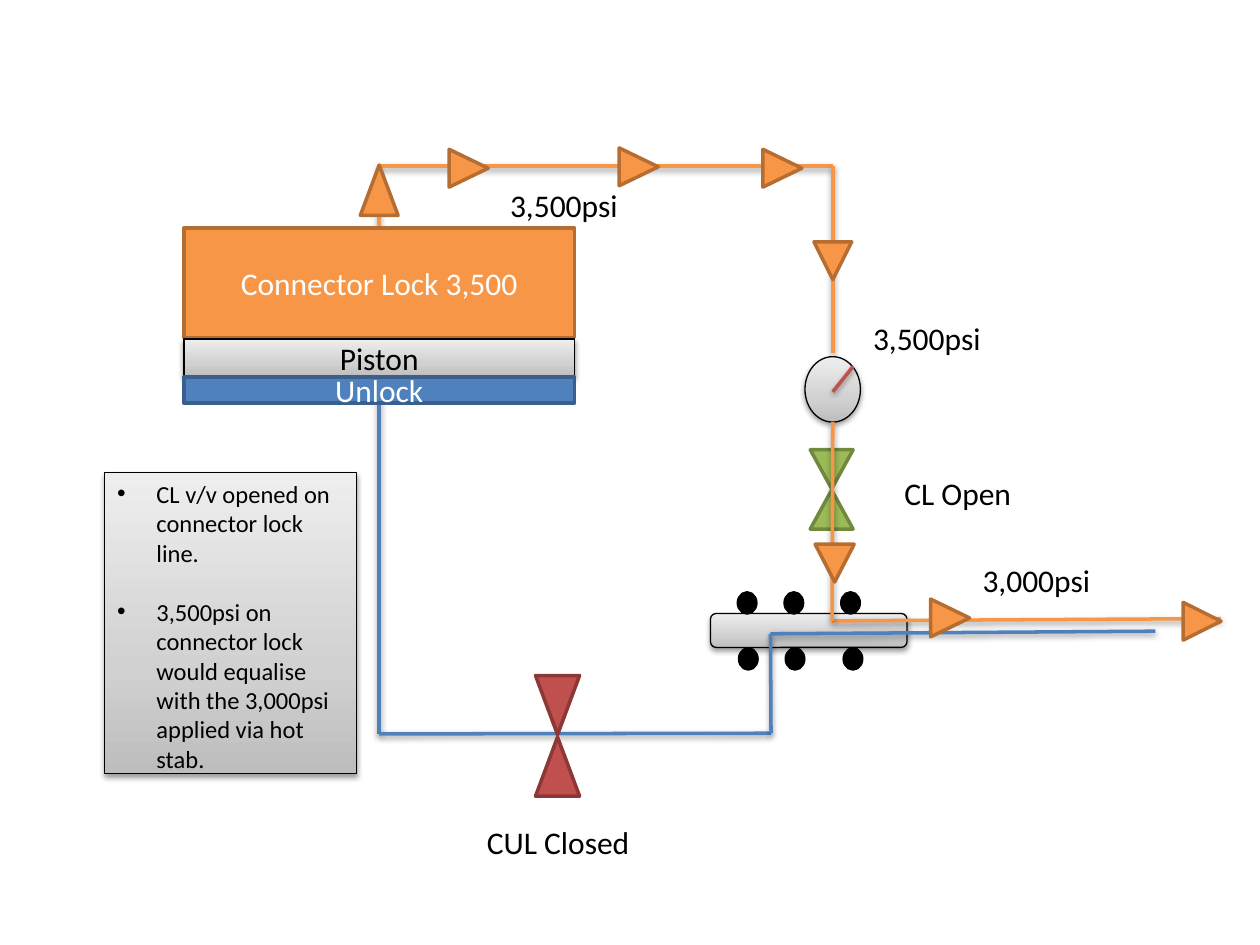
from copy import deepcopy

from lxml.etree import SubElement
from pptx import Presentation
from pptx.dml.color import RGBColor
from pptx.enum.shapes import MSO_CONNECTOR, MSO_SHAPE as Preset
from pptx.enum.text import MSO_ANCHOR as Anchor, PP_ALIGN as Align
from pptx.oxml.ns import qn
from pptx.util import Pt

COLORS = {
    "orange": "F79646", "orange edge": "B66D31",
    "blue": "4F81BD", "blue edge": "3A5F8C",
    "green": "9BBB59", "green edge": "71893F",
    "red": "C0504D", "red edge": "8C3836",
    "black": "000000", "white": "FFFFFF",
}
METAL = [(0, "BDBDBD"), (35, "D1D1D1"), (100, "EEEEEE")]
FONT = "Calibri"

# Pipes: colour, then the points they run through
BACK_PIPES = [
    ("orange", [(216.7, 136.8), (216.7, 95), (475.9, 95), (475.9, 201.6)]),
    ("blue", [(216.7, 225.4), (216.7, 419.4), (440.6, 419)]),
]
FRONT_PIPES = [
    ("blue", [(660.2, 360.7), (440.3, 362.2), (440.6, 419)]),
    ("orange", [(697.7, 353.5), (475.5, 354.8), (475.9, 241.2)]),
]
NEEDLE = ("red", [(475.9, 223.9), (487.4, 209.5)])

# Valves: colour, left, top, triangle width and height, top of the lower half
VALVES = [
    ("green", 463, 257, 24.5, 22.3, 280),
    ("red", 306, 386, 25.2, 33.8, 421.2),
]
# Flow arrows: left, top, width, height, rotation
ARROWS = [
    (205.9, 94.3, 21.6, 28.8, 0),
    (257, 85, 21.6, 22.3, 90),
    (354.2, 84.2, 21.6, 22.3, 90),
    (436.3, 85, 21.6, 22.3, 90),
    (465.1, 138.2, 21.6, 21.6, 180),
    (465.8, 311, 22.3, 21.6, 180),
    (532.1, 342, 21.6, 22.3, 90),
    (676.1, 344.2, 21.6, 21.6, 90),
]
GAUGE = (460, 203.8, 31.7, 37.4)
MANIFOLD = (406, 350.6, 112.3, 19.4)
PORT_ROWS = [(338.8, [421.9, 448.6, 481]), (370.8, [422.6, 449.3, 482.4])]
PORT_SIZE = (10, 11.5)

# Connector, from top to bottom: text, fill, text colour, top, height
CONNECTOR = [
    ("Connector Lock 3,500", "orange", "white", 130.3, 62.6),
    ("Piston", "metal", "black", 193.7, 21.6),
    ("Unlock", "blue", "white", 215.3, 15.1),
]
CONNECTOR_LEFT, CONNECTOR_WIDTH = 105.1, 223.2

LABELS = [
    ("CUL Closed", 257, 466.6, Align.CENTER),
    ("CL Open", 485.3, 267.1, Align.CENTER),
    ("3,500psi", 491.8, 178.6, Align.LEFT),
    ("3,000psi", 554.4, 316.8, Align.LEFT),
    ("3,500psi", 284.4, 103, Align.LEFT),
]
LABEL_SIZE = (124, 29)

NOTE_BOX = (59.8, 270, 144, 172.1)
NOTES = [
    "CL v/v opened on connector lock line.",
    "3,500psi on connector lock would equalise with the 3,000psi applied via hot stab.",
]

presentation = Presentation()
presentation.slide_width, presentation.slide_height = Pt(720), Pt(540)
slide = presentation.slides.add_slide(presentation.slide_layouts[6])


def rgb(name):
    return RGBColor.from_string(COLORS[name])


def add_shadow(effects):
    shadow = SubElement(effects, qn("a:outerShdw"), blurRad="40000", dist="20000",
                        dir="5400000", rotWithShape="0")
    color = SubElement(shadow, qn("a:srgbClr"), val=COLORS["black"])
    SubElement(color, qn("a:alpha"), val="38000")


def fill_metal(shape):
    shape.fill.gradient()
    shape.fill.gradient_angle = 90
    stops = next(shape._element.spPr.iter(qn("a:gsLst")))
    stops.insert(1, deepcopy(stops[0]))
    for element, stop, (position, color) in zip(stops, shape.fill.gradient_stops, METAL):
        element.set("pos", str(position * 1000))
        stop.color.rgb = RGBColor.from_string(color)


def add_part(preset, box, fill, rotation=0):
    shape = slide.shapes.add_shape(preset, *map(Pt, box))
    shape.rotation = rotation
    shape.shadow.inherit = False
    if fill == "metal":
        fill_metal(shape)
        add_shadow(next(shape._element.spPr.iter(qn("a:effectLst"))))
    else:
        shape.fill.solid()
        shape.fill.fore_color.rgb = rgb(fill)
    shape.line.color.rgb = rgb("black" if fill in ("metal", "black") else f"{fill} edge")
    shape.line.width = Pt(0.75 if fill == "metal" else 2)
    return shape


def add_pipe(color, points):
    for start, end in zip(points, points[1:]):
        pipe = slide.shapes.add_connector(MSO_CONNECTOR.STRAIGHT, *map(Pt, start + end))
        pipe.line.color.rgb = rgb(color)
        pipe.line.width = Pt(2)
        add_shadow(SubElement(pipe._element.spPr, qn("a:effectLst")))


def write(shape, texts, color="black", size=18, align=Align.LEFT, anchor=Anchor.TOP):
    frame = shape.text_frame
    frame.word_wrap = True
    frame.vertical_anchor = anchor
    frame.text = "\n".join(texts)
    for paragraph in frame.paragraphs:
        paragraph.alignment = align
        for name, value in {"name": FONT, "size": Pt(size)}.items():
            setattr(paragraph.font, name, value)
        paragraph.font.color.rgb = rgb(color)
    return frame


# Pipes behind the parts
for pipe in BACK_PIPES:
    add_pipe(*pipe)

# Gauge with needle
add_part(Preset.OVAL, GAUGE, "metal")
add_pipe(*NEEDLE)

# Valves: two triangles, tip to tip
for color, left, top, width, height, lower_top in VALVES:
    add_part(Preset.ISOSCELES_TRIANGLE, (left, top, width, height), color, 180)
    add_part(Preset.ISOSCELES_TRIANGLE, (left, lower_top, width, height), color)

# Manifold with ports
add_part(Preset.ROUNDED_RECTANGLE, MANIFOLD, "metal")
for top, lefts in PORT_ROWS:
    for left in lefts:
        add_part(Preset.OVAL, (left, top, *PORT_SIZE), "black")

# Pipes in front, and flow arrows
for pipe in FRONT_PIPES:
    add_pipe(*pipe)
for *box, rotation in ARROWS:
    add_part(Preset.ISOSCELES_TRIANGLE, box, "orange", rotation)

# Connector
for text, fill, color, top, height in CONNECTOR:
    box = (CONNECTOR_LEFT, top, CONNECTOR_WIDTH, height)
    write(add_part(Preset.RECTANGLE, box, fill), [text], color,
          align=Align.CENTER, anchor=Anchor.MIDDLE)

# Labels
for text, left, top, align in LABELS:
    write(slide.shapes.add_textbox(*map(Pt, (left, top, *LABEL_SIZE))), [text], align=align)

# Bulleted note
note = write(add_part(Preset.RECTANGLE, NOTE_BOX, "metal"), NOTES, size=14)
for paragraph in note.paragraphs:
    properties = paragraph._p.get_or_add_pPr()
    properties.set("marL", str(Pt(22.5)))
    properties.set("indent", str(Pt(-22.5)))
    bullet_font = properties.makeelement(qn("a:buFont"), {"typeface": "Arial"})
    bullet = properties.makeelement(qn("a:buChar"), {"char": "•"})
    for position, element in enumerate((bullet_font, bullet)):
        properties.insert(position, element)
note.paragraphs[1].space_before = Pt(17)

presentation.save("out.pptx")
